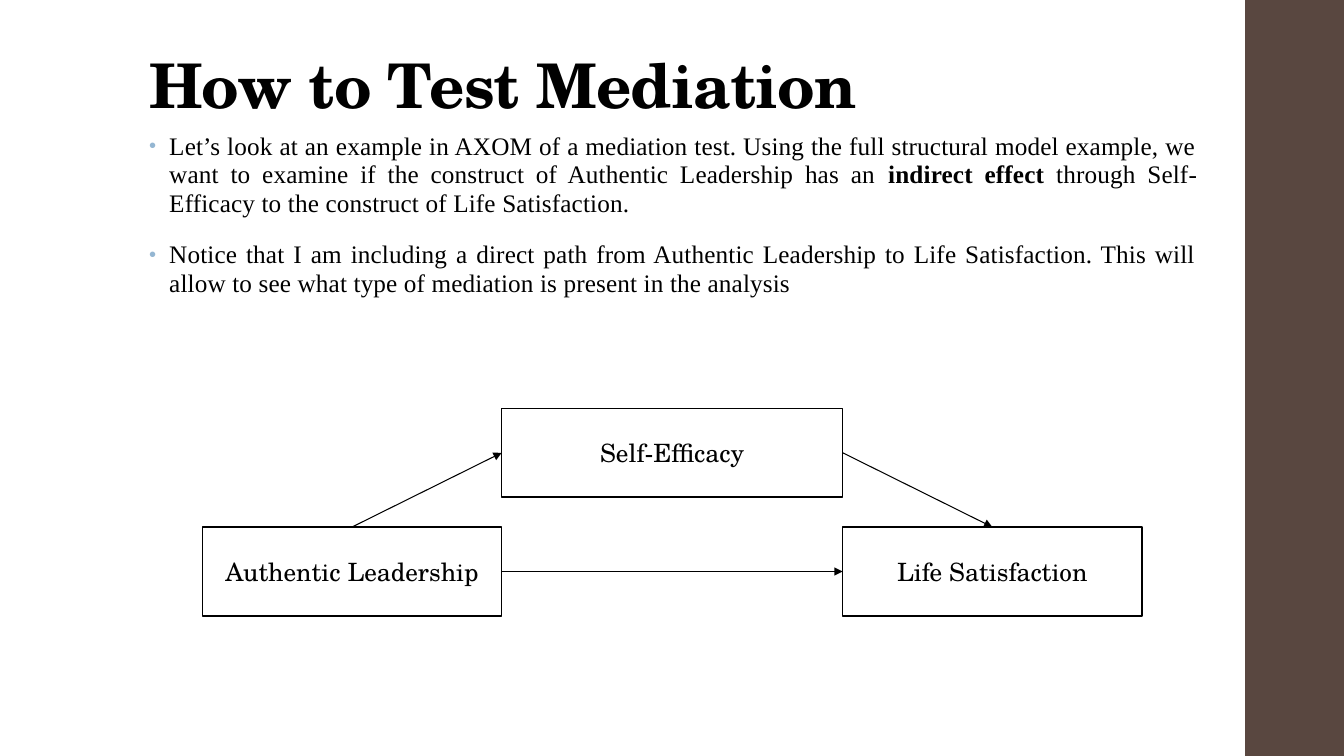
from dataclasses import dataclass

from lxml import etree
from pptx import Presentation
from pptx.dml.color import RGBColor
from pptx.enum import shapes, text
from pptx.oxml import ns
from pptx.util import Cm, Pt

TITLE = "How to Test Mediation"
POINTS = [
    [
        ("Let’s look at an example in AXOM of a mediation test. Using the full "
         "structural model example, we want to examine if the construct of "
         "Authentic Leadership has an ", False),
        ("indirect effect", True),
        (" through Self-Efficacy to the construct of Life Satisfaction.", False),
    ],
    [
        ("Notice that I am including a direct path from Authentic Leadership to "
         "Life Satisfaction. This will allow to see what type of mediation is "
         "present in the analysis", False),
    ],
]
NODES = [
    ("Authentic Leadership", 7.54, 13.28),
    ("Self-Efficacy", 8.59, 10.29),
    ("Life Satisfaction", 7.54, 13.28),
]
TOP, LEFT, RIGHT = 0, 1, 3
LINKS = [(0, TOP, 1, LEFT), (1, RIGHT, 2, TOP), (0, RIGHT, 2, LEFT)]


@dataclass(frozen=True)
class Theme:
    ink: str = "000000"
    paper: str = "FFFFFF"
    stripe: str = "594740"
    bullet: str = "94B6D2"
    head: str = "TeX Gyre Schola"
    body: str = "Times New Roman"
    big: float = 44
    base: float = 18
    edge: float = 1.1
    arrow: float = 0.75


theme = Theme()
WIDE, HIGH = 33.86, 19.05
MARGIN, SPAN = 3.5, 26.92
STRIPE = 31.37
START, TALL = 5.1, 2.24


def color(code):
    return RGBColor.from_string(code)


def add(parent, tag, **attrs):
    return etree.SubElement(parent, ns.qn(tag), attrs)


def write(para, words, face, size, bold=False, track=None):
    run = para.add_run()
    run.text = words
    font = run.font
    font.name, font.size, font.bold = face, Pt(size), bold
    font.color.rgb = color(theme.ink)
    if track is not None:
        font._element.set("spc", str(track))


def place(shape, left, top, width, height):
    shape.left, shape.top = Cm(left), Cm(top)
    shape.width, shape.height = Cm(width), Cm(height)


def block(slide, left, top, width, height, fill):
    shape = slide.shapes.add_shape(
        shapes.MSO_SHAPE.RECTANGLE, Cm(left), Cm(top), Cm(width), Cm(height))
    shape.shadow.inherit = False
    shape.fill.solid()
    shape.fill.fore_color.rgb = color(fill)
    shape.line.fill.background()
    return shape


def add_title(slide):
    title = slide.shapes.title
    place(title, MARGIN, 1.02, SPAN, 2.18)
    frame = title.text_frame
    frame.auto_size = text.MSO_AUTO_SIZE.NONE
    frame.vertical_anchor = text.MSO_ANCHOR.BOTTOM
    para = frame.paragraphs[0]
    para.alignment = text.PP_ALIGN.LEFT
    para.line_spacing = 0.9
    write(para, TITLE, theme.head, theme.big, True, -50)


def add_points(slide):
    body = slide.placeholders[1]
    place(body, MARGIN, 3.2, SPAN, 5.56)
    frame = body.text_frame
    frame.auto_size = text.MSO_AUTO_SIZE.NONE
    for i, point in enumerate(POINTS):
        para = frame.add_paragraph() if i else frame.paragraphs[0]
        para.alignment = text.PP_ALIGN.JUSTIFY
        para.line_spacing = 0.95
        para.space_before, para.space_after = Pt(14), Pt(2)
        props = para._p.get_or_add_pPr()
        props.set("marL", str(Cm(0.51)))
        props.set("indent", str(-Cm(0.51)))
        add(add(props, "a:buClr"), "a:srgbClr", val=theme.bullet)
        add(props, "a:buSzPct", val="80000")
        add(props, "a:buChar", char="•")
        for words, bold in point:
            write(para, words, theme.body, theme.base, bold, 10)


def add_nodes(slide):
    boxes, left = [], START
    for label, width, top in NODES:
        box = block(slide, left, top, width, TALL, theme.paper)
        box.line.color.rgb = color(theme.ink)
        box.line.width = Pt(theme.edge)
        frame = box.text_frame
        frame.word_wrap = True
        frame.vertical_anchor = text.MSO_ANCHOR.MIDDLE
        para = frame.paragraphs[0]
        para.alignment = text.PP_ALIGN.CENTER
        write(para, label, theme.head, theme.base)
        boxes.append(box)
        left += width
    return boxes


def add_links(slide, boxes):
    for start, out, end, into in LINKS:
        link = slide.shapes.add_connector(
            shapes.MSO_CONNECTOR.STRAIGHT, 0, 0, 0, 0)
        link.begin_connect(boxes[start], out)
        link.end_connect(boxes[end], into)
        link.line.color.rgb = color(theme.ink)
        link.line.width = Pt(theme.arrow)
        add(link.line._get_or_add_ln(), "a:tailEnd", type="triangle")
        add(link._element.spPr, "a:effectLst")


def main():
    deck = Presentation()
    deck.slide_width, deck.slide_height = Cm(WIDE), Cm(HIGH)
    slide = deck.slides.add_slide(deck.slide_layouts[1])
    block(slide, STRIPE, 0, WIDE - STRIPE, HIGH, theme.stripe)
    add_title(slide)
    add_points(slide)
    add_links(slide, add_nodes(slide))
    deck.save("out.pptx")


if __name__ == "__main__":
    main()
